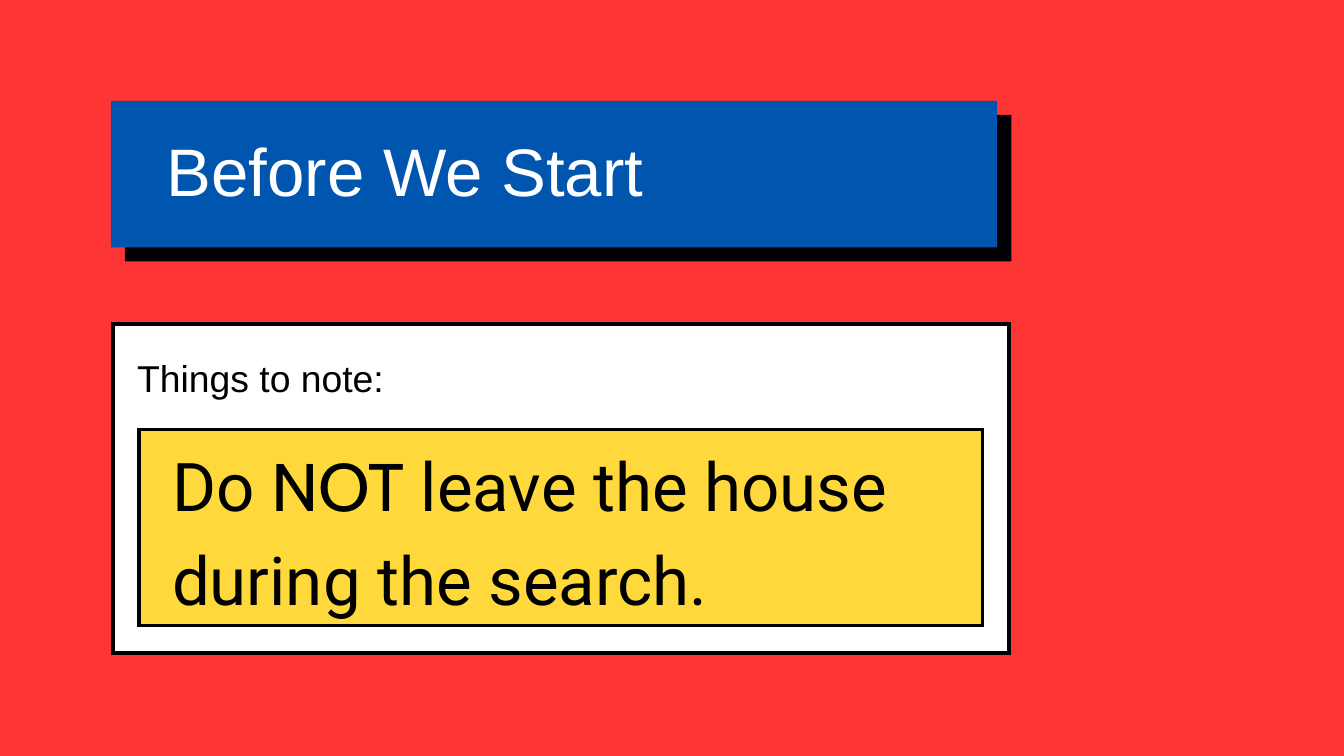
from lxml.etree import SubElement
from pptx import Presentation
from pptx.dml.color import RGBColor
from pptx.enum.shapes import MSO_SHAPE
from pptx.enum.text import MSO_ANCHOR, MSO_AUTO_SIZE, PP_ALIGN
from pptx.oxml.ns import qn
from pptx.util import Inches, Pt


def color(value):
    return RGBColor.from_string(value)


def format_text(shape, box, font_name, size, text_color, line_spacing):
    shape.left, shape.top, shape.width, shape.height = map(Inches, box)
    frame = shape.text_frame
    frame.word_wrap = True
    frame.auto_size = MSO_AUTO_SIZE.NONE
    frame.vertical_anchor = MSO_ANCHOR.TOP
    frame.margin_left = frame.margin_top = frame.margin_right = frame.margin_bottom = 0
    paragraph = frame.paragraphs[0]
    paragraph.alignment = PP_ALIGN.LEFT
    paragraph.line_spacing = Pt(line_spacing)
    paragraph.space_before = Pt(0)
    paragraph.font.name = font_name
    paragraph.font.size = Pt(size)
    paragraph.font.color.rgb = color(text_color)
    return paragraph


presentation = Presentation()
presentation.slide_width = Inches(20)
presentation.slide_height = Inches(11.25)
slide = presentation.slides.add_slide(presentation.slide_layouts[1])
slide.background.fill.solid()
slide.background.fill.fore_color.rgb = color("FE3535")
title, body = slide.placeholders

panels = [
    ((1.86, 1.71, 13.19, 2.18), "000000", False),
    ((1.65, 1.5, 13.19, 2.18), "0056AF", False),
    ((1.68, 4.82, 13.34, 4.9), "FFFFFF", True),
    ((2.07, 6.39, 12.55, 2.92), "FFD93B", True),
]
for box, fill_color, outlined in panels:
    panel = slide.shapes.add_shape(MSO_SHAPE.RECTANGLE, *map(Inches, box))
    panel.shadow.inherit = False
    panel.fill.solid()
    panel.fill.fore_color.rgb = color(fill_color)
    if outlined:
        panel.line.color.rgb = color("000000")
        panel.line.width = Pt(4)
        outline = panel.element.spPr.find(qn("a:ln"))
        SubElement(outline, qn("a:miter"), lim="800000")
    else:
        panel.line.fill.background()

for placeholder in (body, title):
    slide.shapes.element.append(placeholder.element)

message = format_text(body, (2.56, 6.41, 11.58, 2.74), "Roboto", 72, "000000", 100.8)
for text, font_name in [
    ("Do ", "Roboto"),
    ("NOT", "Cabin"),
    (" leave the house during the search.", "Roboto"),
]:
    run = message.add_run()
    run.text = text
    run.font.name = font_name
properties = message._p.get_or_add_pPr()
properties.set("marL", "0")
properties.set("indent", "0")
bullet = properties.find(qn("a:defRPr"))
bullet.addprevious(SubElement(properties, qn("a:buNone")))

heading = format_text(title, (2.2, 2.22, 12.08, 0.97), "Arial", 72, "FFFFFF", 64.8)
heading.add_run().text = "Before We Start"
title.text_frame.margin_left = Inches(0.28)

label = slide.shapes.add_textbox(0, 0, 0, 0)
note = format_text(label, (2.04, 5.18, 12.61, 0.75), "Arial", 40, "000000", 56)
note.add_run().text = "Things to note:"

presentation.save("out.pptx")
